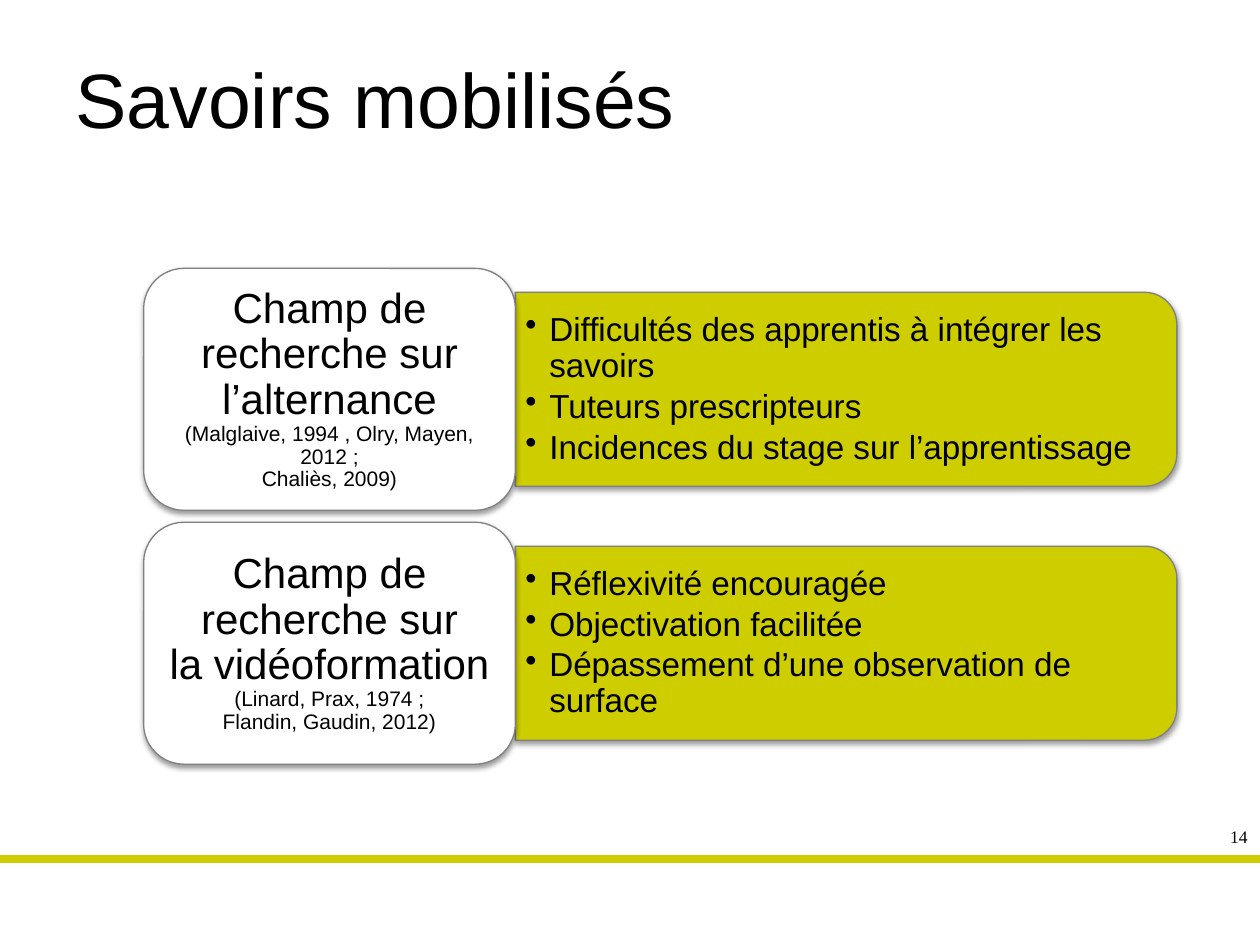
import pptx
import pptx.dml.color
import pptx.enum.shapes
import pptx.enum.text
import pptx.oxml
import pptx.oxml.ns
import pptx.util
from lxml import etree

Inches = pptx.util.Inches
Pt = pptx.util.Pt
qn = pptx.oxml.ns.qn
SHAPES = pptx.enum.shapes.MSO_SHAPE
ALIGN = pptx.enum.text.PP_ALIGN
ANCHOR = pptx.enum.text.MSO_ANCHOR

BLACK = pptx.dml.color.RGBColor(0x00, 0x00, 0x00)
WHITE = pptx.dml.color.RGBColor(0xFF, 0xFF, 0xFF)
GREY = pptx.dml.color.RGBColor(0x80, 0x80, 0x80)
OLIVE = pptx.dml.color.RGBColor(0xCD, 0xCD, 0x00)

SHADOW = (
    '<a:effectLst xmlns:a="http://schemas.openxmlformats.org/drawingml/2006/main">'
    '<a:outerShdw blurRad="40000" dist="20000" dir="5400000" rotWithShape="0">'
    '<a:srgbClr val="000000"><a:alpha val="38000"/></a:srgbClr>'
    '</a:outerShdw></a:effectLst>'
)

FIELDS = [
    (
        [("Champ de recherche sur l’alternance", 24),
         ("(Malglaive, 1994 , Olry, Mayen, 2012 ;", 12),
         ("Chaliès, 2009)", 12)],
        ["Difficultés des apprentis à intégrer les savoirs",
         "Tuteurs prescripteurs",
         "Incidences du stage sur l’apprentissage"],
    ),
    (
        [("Champ de recherche sur", 24),
         ("la vidéoformation", 24),
         ("(Linard, Prax, 1974 ;", 12),
         ("Flandin, Gaudin, 2012)", 12)],
        ["Réflexivité encouragée",
         "Objectivation facilitée",
         "Dépassement d’une observation de surface"],
    ),
]


def style_font(font, size, name="Arial"):
    font.name = name
    font.size = Pt(size)
    font.color.rgb = BLACK


def add_panel(kind, left, top, width, height, fill):
    panel = slide.shapes.add_shape(
        kind, Inches(left), Inches(top), Inches(width), Inches(height))
    panel.fill.solid()
    panel.fill.fore_color.rgb = fill
    panel.line.color.rgb = GREY
    panel.line.width = Pt(0.75)
    panel._element.spPr.append(pptx.oxml.parse_xml(SHADOW))
    return panel


prs = pptx.Presentation()
prs.slide_width = Inches(10)
prs.slide_height = Inches(7.5)
slide = prs.slides.add_slide(prs.slide_layouts[5])

rule = slide.shapes.add_connector(
    pptx.enum.shapes.MSO_CONNECTOR.STRAIGHT,
    Inches(10), Inches(6.82), Inches(0), Inches(6.82))
rule.line.color.rgb = OLIVE
rule.line.width = Pt(4.5)
etree.SubElement(rule._element.spPr, qn("a:effectLst"))

page_number = slide.shapes.add_textbox(
    Inches(9.49), Inches(6.51), Inches(0.51), Inches(0.27))
page_number.text_frame.word_wrap = True
number = page_number.text_frame.paragraphs[0]
number.text = "14"
number.alignment = ALIGN.RIGHT
style_font(number.font, 10, "Times New Roman")

title = slide.shapes.title
title.left, title.top = Inches(0.5), Inches(0.3)
title.width, title.height = Inches(8.17), Inches(1.25)
title.text_frame.text = "Savoirs mobilisés"
title.text_frame.vertical_anchor = ANCHOR.TOP
title.text_frame.margin_top = Inches(0.11)
heading = title.text_frame.paragraphs[0]
heading.alignment = ALIGN.LEFT
style_font(heading.font, 44)

CARD_LEFT, CARD_TOP, CARD_WIDTH, CARD_HEIGHT = 1.14, 2.13, 2.95, 1.92
BAR_LEFT, BAR_WIDTH, BAR_HEIGHT = CARD_LEFT + CARD_WIDTH, 5.25, 1.54
LIST_WIDTH, LIST_HEIGHT = 5.17, 1.39
ROW_PITCH = 2.015

for row, (card_lines, points) in enumerate(FIELDS):
    card_top = CARD_TOP + row * ROW_PITCH
    middle = card_top + CARD_HEIGHT / 2

    bar = add_panel(
        SHAPES.ROUND_2_SAME_RECTANGLE,
        BAR_LEFT + (BAR_WIDTH - BAR_HEIGHT) / 2, middle - BAR_WIDTH / 2,
        BAR_HEIGHT, BAR_WIDTH, OLIVE)
    bar.rotation = 90

    point_list = slide.shapes.add_textbox(
        Inches(BAR_LEFT), Inches(middle - LIST_HEIGHT / 2),
        Inches(LIST_WIDTH), Inches(LIST_HEIGHT)).text_frame
    point_list.word_wrap = True
    point_list.vertical_anchor = ANCHOR.MIDDLE
    point_list.margin_left = point_list.margin_right = Inches(0.08)
    point_list.margin_top = point_list.margin_bottom = Inches(0.04)
    for index, point in enumerate(points):
        item = point_list.paragraphs[0] if index == 0 else point_list.add_paragraph()
        item.text = point
        item.line_spacing = 0.9
        item.space_after = Pt(2.85)
        properties = item._p.get_or_add_pPr()
        properties.set("marL", str(Inches(0.19)))
        properties.set("indent", str(-Inches(0.19)))
        etree.SubElement(properties, qn("a:buChar"), char="•")
        style_font(item.font, 19)

    card = add_panel(
        SHAPES.ROUNDED_RECTANGLE,
        CARD_LEFT, card_top, CARD_WIDTH, CARD_HEIGHT, WHITE).text_frame
    card.word_wrap = True
    card.vertical_anchor = ANCHOR.MIDDLE
    label = card.paragraphs[0]
    label.alignment = ALIGN.CENTER
    label.line_spacing = 0.9
    for index, (line, size) in enumerate(card_lines):
        if index:
            label.add_line_break()
            previous_size = card_lines[index - 1][1]
            etree.SubElement(label._p[-1], qn("a:rPr"), sz=str(previous_size * 100))
        run = label.add_run()
        run.text = line
        style_font(run.font, size)

prs.save("out.pptx")
